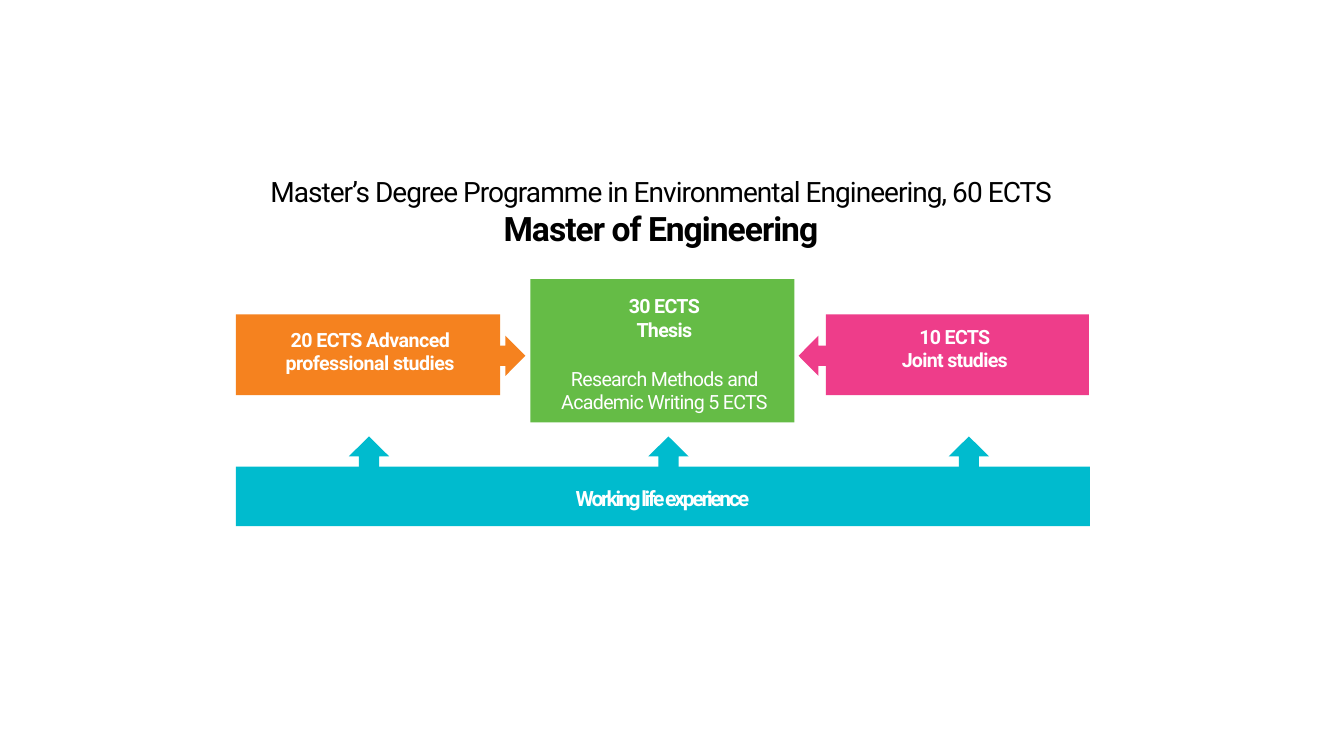
from dataclasses import dataclass

from pptx import Presentation
from pptx.dml.color import RGBColor
from pptx.enum.shapes import MSO_SHAPE
from pptx.enum.text import MSO_ANCHOR, PP_ALIGN
from pptx.util import Pt

PX = 9144  # EMU per px, 100 px to the inch


@dataclass(frozen=True)
class Theme:
    font: str = "Roboto"
    black: str = "000000"
    white: str = "FFFFFF"
    orange: str = "F5821F"
    green: str = "65BC46"
    pink: str = "EE3D8A"
    cyan: str = "00BBCE"
    programme: int = 20
    degree: int = 24
    body: int = 14
    foundation: int = 15


THEME = Theme()


@dataclass(frozen=True)
class Line:
    text: str
    size: int = THEME.body
    bold: bool = True
    color: str = THEME.white
    tracking: int = -50  # hundredths of a point
    space_before: int = 0
    spacing: int = 0  # exact line pitch in points, 0 for single


def px(*lengths):
    return [length * PX for length in lengths]


def add_block(slide, preset, box, color):
    shape = slide.shapes.add_shape(preset, *px(*box))
    shape.shadow.inherit = False
    shape.fill.solid()
    shape.fill.fore_color.rgb = RGBColor.from_string(color)
    shape.line.fill.background()
    return shape


def add_arrow(slide, preset, box, color):
    arrow = add_block(slide, preset, box, color)
    arrow.adjustments[0] = 0.5
    arrow.adjustments[1] = 0.52


def add_text(slide, box, lines, inset=(10, 5), anchor=MSO_ANCHOR.TOP):
    frame = slide.shapes.add_textbox(*px(*box)).text_frame
    frame.word_wrap = True
    frame.vertical_anchor = anchor
    frame.margin_left = frame.margin_right = inset[0] * PX
    frame.margin_top = frame.margin_bottom = inset[1] * PX
    frame.text = "\n".join(line.text for line in lines)
    for paragraph, line in zip(frame.paragraphs, lines):
        paragraph.alignment = PP_ALIGN.CENTER
        if line.space_before:
            paragraph.space_before = Pt(line.space_before)
        if line.spacing:
            paragraph.line_spacing = Pt(line.spacing)
        for run in paragraph.runs:
            run.font.name = THEME.font
            run.font.size = Pt(line.size)
            run.font.bold = line.bold
            run.font.color.rgb = RGBColor.from_string(line.color)
            run._r.get_or_add_rPr().set("spc", str(line.tracking))


def main():
    presentation = Presentation()
    presentation.slide_width, presentation.slide_height = px(1333, 750)
    slide = presentation.slides.add_slide(presentation.slide_layouts[6])

    # Heading
    add_text(slide, (234, 172, 843, 74), [
        Line("Master’s Degree Programme in Environmental Engineering, 60 ECTS",
             THEME.programme, False, THEME.black, -70),
        Line("Master of Engineering", THEME.degree, True, THEME.black, -70),
    ], (0, 0), MSO_ANCHOR.BOTTOM)

    # Study modules
    for box, color in [
        ((234, 312, 262, 80), THEME.orange),
        ((526, 277, 262, 142), THEME.green),
        ((819, 312, 261, 80), THEME.pink),
    ]:
        add_block(slide, MSO_SHAPE.RECTANGLE, box, color)

    # Arrows towards the thesis
    add_arrow(slide, MSO_SHAPE.RIGHT_ARROW, (483, 333, 38, 40), THEME.orange)
    add_arrow(slide, MSO_SHAPE.LEFT_ARROW, (792, 333, 38, 40), THEME.pink)

    # Module texts
    add_text(slide, (254, 322, 226, 79), [
        Line("20 ECTS Advanced professional studies", tracking=-40, spacing=16),
    ])
    add_text(slide, (541, 287, 236, 128), [
        Line("30 ECTS"),
        Line("Thesis"),
        Line("Research Methods and Academic Writing 5 ECTS", bold=False,
             space_before=18),
    ])
    add_text(slide, (817, 317, 260, 57), [Line("10 ECTS"), Line("Joint studies")])

    # Working life foundation
    add_block(slide, MSO_SHAPE.RECTANGLE, (234, 463, 847, 59), THEME.cyan)
    add_text(slide, (526, 482, 262, 25), [
        Line("Working life experience", THEME.foundation, tracking=-160),
    ], (0, 0))
    for left in (346, 643, 941):
        add_arrow(slide, MSO_SHAPE.UP_ARROW, (left, 433, 40, 38), THEME.cyan)

    presentation.save("out.pptx")


if __name__ == "__main__":
    main()
